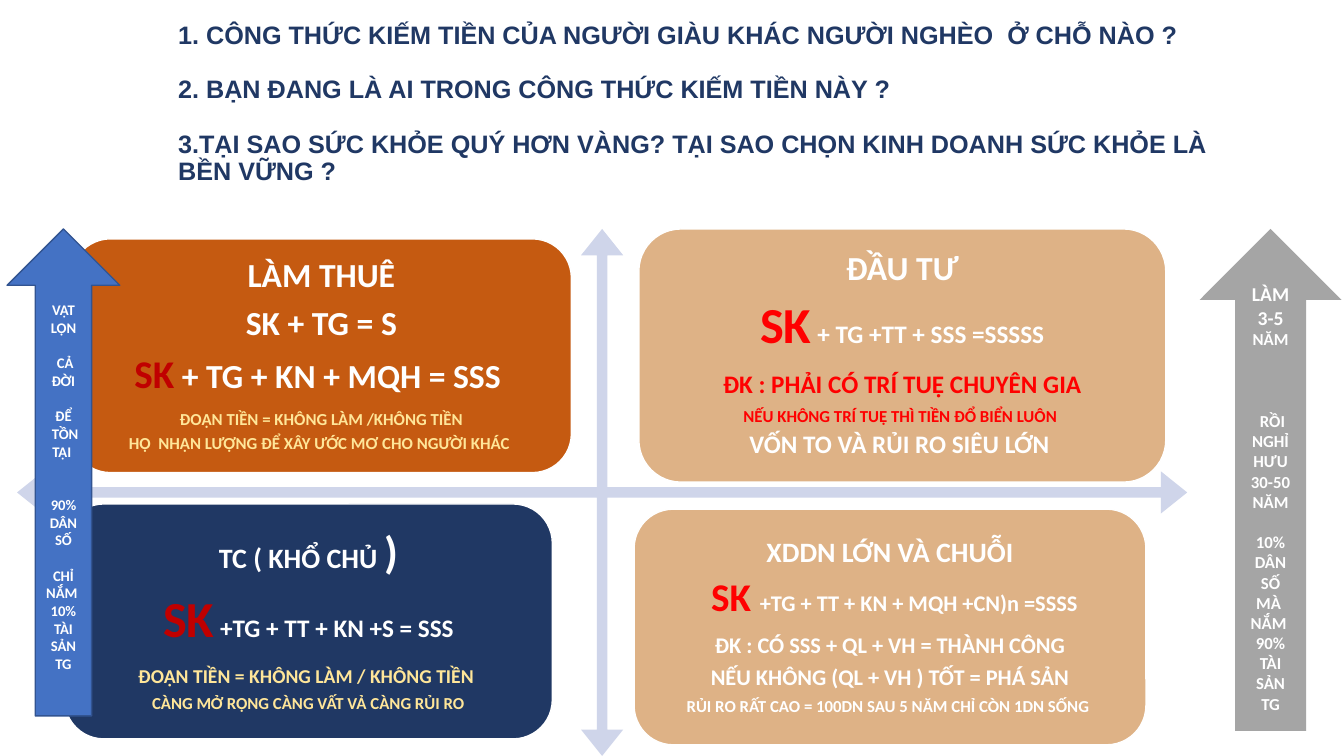
from dataclasses import dataclass
from typing import Optional

from lxml import etree
from pptx import Presentation
from pptx import util as u
from pptx.dml.color import RGBColor
from pptx.enum import shapes, text

WHITE = RGBColor(0xFF, 0xFF, 0xFF)
NAVY = RGBColor(0x20, 0x38, 0x64)
PALE = RGBColor(0xCF, 0xD5, 0xEA)
RUST = RGBColor(0xC5, 0x5A, 0x11)
SAND = RGBColor(0xDE, 0xB2, 0x86)
BLUE = RGBColor(0x44, 0x72, 0xC4)
EDGE = RGBColor(0x32, 0x54, 0x91)
GRAY = RGBColor(0xA5, 0xA5, 0xA5)
WINE = RGBColor(0xC0, 0x00, 0x00)
RED = RGBColor(0xFF, 0x00, 0x00)
CREAM = RGBColor(0xFF, 0xE6, 0x99)

ROUND = shapes.MSO_SHAPE.ROUNDED_RECTANGLE
UP = shapes.MSO_SHAPE.UP_ARROW
Box = tuple[float, float, float, float]


@dataclass
class Run:
    text: str
    size: float
    color: RGBColor = WHITE


@dataclass
class Line:
    runs: list[Run]
    above: float = 0


@dataclass
class Panel:
    kind: shapes.MSO_SHAPE
    box: Box
    fill: RGBColor
    edge: Optional[RGBColor]
    inset: tuple[float, float]
    lines: list[Line]
    lead: float = 1.0
    after: float = 0


def line(words: str, size: float, color: RGBColor = WHITE) -> Line:
    return Line([Run(words, size, color)])


def card(box: Box, fill: RGBColor, inset: float, lines: list[Line]) -> Panel:
    return Panel(ROUND, box, fill, WHITE, (inset, inset), lines, 0.9, 0.35)


def arrow(box: Box, fill: RGBColor, edge: Optional[RGBColor],
          lines: list[Line]) -> Panel:
    return Panel(UP, box, fill, edge, (0.25, 0.13), lines)


def stack(size: float, items: list[tuple[str, int]]) -> list[Line]:
    return [Line([Run(words, size)], round(skip * size * 1.22, 1))
            for words, skip in items]


def write(frame, lines: list[Line], font: str, lead: float, after: float,
          align: text.PP_ALIGN) -> None:
    frame.word_wrap = True
    for index, row in enumerate(lines):
        para = frame.paragraphs[0] if index == 0 else frame.add_paragraph()
        para.alignment = align
        para.line_spacing = lead
        para.space_before = u.Pt(row.above)
        para.space_after = u.Pt(round(after * max(r.size for r in row.runs), 1))
        for part in row.runs:
            run = para.add_run()
            run.text = part.text
            run.font.name = font
            run.font.size = u.Pt(part.size)
            run.font.bold = True
            run.font.color.rgb = part.color


def shape(slide, kind: shapes.MSO_SHAPE, box: Box, fill: RGBColor,
          edge: Optional[RGBColor]):
    item = slide.shapes.add_shape(kind, *map(u.Cm, box))
    item.shadow.inherit = False
    item.fill.solid()
    item.fill.fore_color.rgb = fill
    if edge is None:
        item.line.fill.background()
    else:
        item.line.color.rgb = edge
        item.line.width = u.Pt(1)
    return item


def draw(slide, panel: Panel) -> None:
    item = shape(slide, panel.kind, panel.box, panel.fill, panel.edge)
    frame = item.text_frame
    frame.vertical_anchor = text.MSO_ANCHOR.MIDDLE
    frame.margin_left = frame.margin_right = u.Cm(panel.inset[0])
    frame.margin_top = frame.margin_bottom = u.Cm(panel.inset[1])
    write(frame, panel.lines, "Calibri", panel.lead, panel.after,
          text.PP_ALIGN.CENTER)


TITLE = [
    Line([Run("1. CÔNG THỨC KIẾM TIỀN CỦA NGƯỜI GIÀU KHÁC NGƯỜI NGHÈO  Ở CHỖ NÀO ?", 18, NAVY)]),
    Line([Run("2. BẠN ĐANG LÀ AI TRONG CÔNG THỨC KIẾM TIỀN NÀY ?", 18, NAVY)], 19.4),
    Line([Run("3.TẠI SAO SỨC KHỎE QUÝ HƠN VÀNG? TẠI SAO CHỌN KINH DOANH "
              "SỨC KHỎE LÀ BỀN VỮNG ?", 18, NAVY)], 19.4),
]

PANELS = [
    card((1.8, 6.02, 12.6, 5.89), RUST, 0.25, [
        line("LÀM THUÊ", 24),
        line("SK + TG = S", 24),
        Line([Run("SK", 28, WINE), Run(" + TG + KN + MQH = SSS ", 24)]),
        line("ĐOẠN TIỀN = KHÔNG LÀM /KHÔNG TIỀN", 12, CREAM),
        line("HỌ  NHẬN LƯỢNG ĐỂ XÂY ƯỚC MƠ CHO NGƯỜI KHÁC ", 12, CREAM),
    ]),
    card((16.1, 5.77, 13.28, 6.38), SAND, 0.25, [
        line("ĐẦU TƯ", 24),
        Line([Run("SK", 36, RED), Run(" + TG +TT + SSS =SSSSS", 18)]),
        line("ĐK : PHẢI CÓ TRÍ TUỆ CHUYÊN GIA", 18, RED),
        line("NẾU KHÔNG TRÍ TUỆ THÌ TIỀN ĐỔ BIỂN LUÔN ", 12, RED),
        line("VỐN TO VÀ RỦI RO SIÊU LỚN ", 18),
    ]),
    card((1.63, 12.7, 12.29, 5.92), NAVY, 0.2, [
        Line([Run("TC ( KHỔ CHỦ ", 20), Run(")", 32)]),
        Line([Run("SK", 36, WINE), Run(" +TG + TT + KN +S = SSS", 18)]),
        line("ĐOẠN TIỀN = KHÔNG LÀM / KHÔNG TIỀN ", 14, CREAM),
        line("CÀNG MỞ RỘNG CÀNG VẤT VẢ CÀNG RỦI RO", 12, CREAM),
    ]),
    card((15.98, 12.83, 12.9, 5.94), SAND, 0.2, [
        line("XDDN LỚN VÀ CHUỖI", 20),
        Line([Run(" SK ", 28, RED), Run("+TG + TT + KN + MQH +CN)n =SSSS", 16)]),
        line("ĐK : CÓ SSS + QL + VH = THÀNH CÔNG", 16),
        line("NẾU KHÔNG (QL + VH ) TỐT = PHÁ SẢN", 16),
        line("RỦI RO RẤT CAO = 100DN SAU 5 NĂM CHỈ CÒN 1DN SỐNG ", 12),
    ]),
    arrow((0.18, 5.77, 2.84, 12.27), BLUE, EDGE, stack(10.5, [
        ("VẬT LỘN", 0), (" CẢ ĐỜI", 1), ("ĐỂ", 1), (" TỒN TẠI ", 0),
        ("90% DÂN SỐ", 2), ("CHỈ NẮM ", 1), ("10%", 0), ("TÀI SẢN TG", 0),
    ])),
    arrow((30.23, 5.77, 3.58, 12.65), GRAY, None, [
        Line([Run("LÀM 3-5 ", 14), Run("NĂM", 12)]),
        *stack(12, [
            (" RỒI NGHỈ HƯU 30-50 NĂM", 3), ("10% DÂN", 1), ("SỐ", 0),
            ("MÀ ", 0), ("NẮM ", 0), ("90% TÀI SẢN", 0), ("TG", 0),
        ]),
    ]),
]


def main() -> None:
    deck = Presentation()
    deck.slide_width, deck.slide_height = u.Cm(33.87), u.Cm(19.05)
    slide = deck.slides.add_slide(deck.slide_layouts[6])
    title = slide.shapes.add_textbox(*map(u.Cm, (4.24, 0.36, 27.64, 4.45)))
    title.text_frame.vertical_anchor = text.MSO_ANCHOR.BOTTOM
    write(title.text_frame, TITLE, "Arial", 0.9, 0, text.PP_ALIGN.LEFT)
    cross = shape(slide, shapes.MSO_SHAPE.QUAD_ARROW,
                  (0.43, 5.77, 29.49, 13.28), PALE, None)
    for index, ratio in enumerate((0.02, 0.04, 0.05)):
        cross.adjustments[index] = ratio
    for panel in PANELS:
        draw(slide, panel)
    deck.save("out.pptx")


if __name__ == "__main__":
    main()
